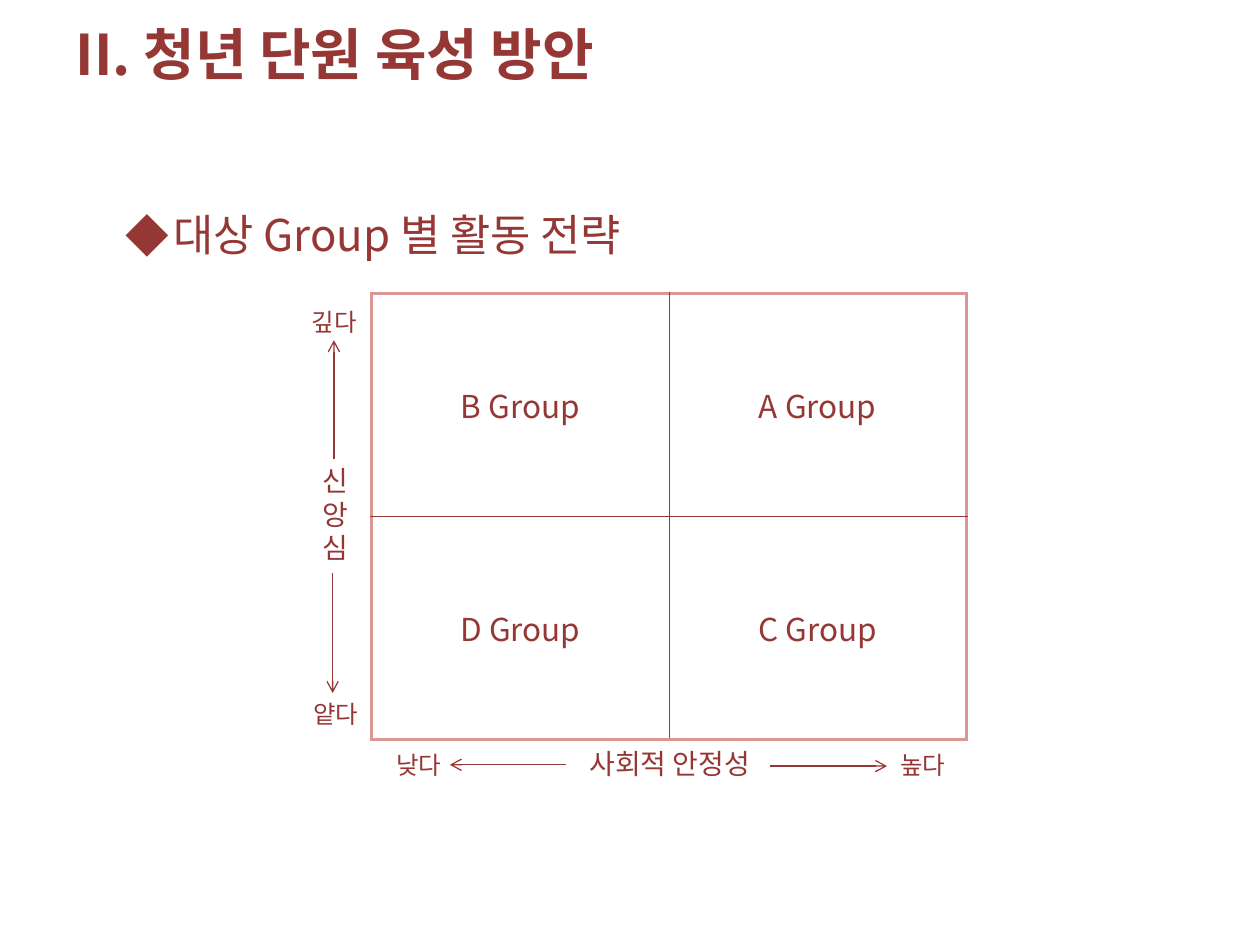
"""Build the slide on activity strategies for four target groups."""
from dataclasses import dataclass

from lxml import etree
from pptx import Presentation
from pptx.dml.color import RGBColor
from pptx.enum import shapes, text
from pptx.oxml import ns
from pptx.util import Inches, Pt


@dataclass(frozen=True)
class Theme:
    font: str = "Noto Sans CJK KR"
    ink: str = "953735"
    frame: str = "D99694"
    title: int = 32
    heading: int = 25
    group: int = 18
    axis: int = 16
    end: int = 14
    frame_width: float = 2.25
    rule_width: float = 0.25
    arrow_width: float = 0.75


@dataclass(frozen=True)
class Label:
    lines: tuple[str, ...]
    left: float
    top: float
    width: float
    height: float
    size: int


@dataclass(frozen=True)
class Arrow:
    x1: float
    y1: float
    x2: float
    y2: float


THEME = Theme()
GROUPS = (("B Group", "A Group"), ("D Group", "C Group"))
LABELS = (
    Label(("신", "앙", "심"), 2.46, 3.63, 0.39, 0.94, THEME.axis),
    Label(("사회적 안정성",), 4.49, 5.88, 1.65, 0.37, THEME.axis),
    Label(("깊다",), 2.29, 2.39, 0.73, 0.34, THEME.end),
    Label(("얕다",), 2.3, 5.5, 0.73, 0.34, THEME.end),
    Label(("낮다",), 2.96, 5.9, 0.73, 0.34, THEME.end),
    Label(("높다",), 6.96, 5.9, 0.73, 0.34, THEME.end),
)
ARROWS = (
    Arrow(2.65, 3.64, 2.65, 2.7),
    Arrow(2.64, 4.55, 2.64, 5.5),
    Arrow(4.49, 6.07, 3.57, 6.07),
    Arrow(6.11, 6.08, 7.04, 6.08),
)


def add_node(parent, tag: str, **attributes: str):
    """Append a DrawingML element and return it."""
    return etree.SubElement(parent, ns.qn(tag), attributes)


def add_run(paragraph, words: str, size: int, bold: bool = False) -> None:
    """Add one run in the theme's font and ink."""
    run = paragraph.add_run()
    run.text = words
    run.font.name = THEME.font
    run.font.size = Pt(size)
    run.font.bold = bold
    run.font.color.rgb = RGBColor.from_string(THEME.ink)
    add_node(run.font._element, "a:ea", typeface=THEME.font)


def add_title(slide, words: str) -> None:
    """Place and fill the title placeholder."""
    title = slide.shapes.title
    title.left, title.top = Inches(0.5), Inches(0.11)
    title.width, title.height = Inches(9), Inches(0.63)
    frame = title.text_frame
    frame.auto_size = text.MSO_AUTO_SIZE.NONE
    frame.vertical_anchor = text.MSO_ANCHOR.MIDDLE
    frame.paragraphs[0].alignment = text.PP_ALIGN.LEFT
    add_run(frame.paragraphs[0], words, THEME.title, bold=True)


def add_heading(slide, words: str) -> None:
    """Add the heading with its diamond bullet."""
    heading = slide.shapes.add_textbox(Inches(0.9), Inches(1.39), Inches(8.58), Inches(4.88))
    heading.text_frame.word_wrap = True
    paragraph = heading.text_frame.paragraphs[0]
    paragraph.line_spacing = 1.5
    paragraph.space_before = Pt(THEME.heading * 0.2)
    properties = paragraph._p.get_or_add_pPr()
    indent = Inches(0.38)
    properties.set("marL", str(indent))
    properties.set("indent", str(-indent))
    add_node(add_node(properties, "a:buClr"), "a:srgbClr", val=THEME.ink)
    add_node(properties, "a:buFont", typeface=THEME.font)
    add_node(properties, "a:buChar", char="◆")
    add_run(paragraph, words, THEME.heading)


def add_border(cell, side: str, outer: bool) -> None:
    """Draw one side of a cell as frame or inner rule."""
    color, width = (
        (THEME.frame, THEME.frame_width) if outer else (THEME.ink, THEME.rule_width)
    )
    border = add_node(cell._tc.get_or_add_tcPr(), f"a:ln{side}", w=str(Pt(width)))
    add_node(add_node(border, "a:solidFill"), "a:srgbClr", val=color)


def add_matrix(slide) -> None:
    """Add the two-by-two table of groups."""
    matrix = slide.shapes.add_table(
        2, 2, Inches(2.95), Inches(2.33), Inches(4.72), Inches(3.54)
    ).table
    matrix.first_row = matrix.horz_banding = False
    for row, names in enumerate(GROUPS):
        for column, name in enumerate(names):
            cell = matrix.cell(row, column)
            cell.vertical_anchor = text.MSO_ANCHOR.MIDDLE
            outer_sides = {"L": column == 0, "R": column == 1, "T": row == 0, "B": row == 1}
            for side, outer in outer_sides.items():
                add_border(cell, side, outer)
            cell.fill.background()
            paragraph = cell.text_frame.paragraphs[0]
            paragraph.alignment = text.PP_ALIGN.CENTER
            add_run(paragraph, name, THEME.group)


def add_label(slide, label: Label) -> None:
    """Add a centred axis label, one paragraph per line."""
    box = slide.shapes.add_textbox(
        Inches(label.left), Inches(label.top), Inches(label.width), Inches(label.height)
    )
    frame = box.text_frame
    frame.word_wrap = False
    frame.auto_size = text.MSO_AUTO_SIZE.SHAPE_TO_FIT_TEXT
    for index, line in enumerate(label.lines):
        paragraph = frame.add_paragraph() if index else frame.paragraphs[0]
        paragraph.alignment = text.PP_ALIGN.CENTER
        add_run(paragraph, line, label.size)


def add_arrow(slide, arrow: Arrow) -> None:
    """Add a thin line with an open arrowhead at its end."""
    connector = slide.shapes.add_connector(
        shapes.MSO_CONNECTOR.STRAIGHT,
        Inches(arrow.x1), Inches(arrow.y1), Inches(arrow.x2), Inches(arrow.y2),
    )
    connector.line.color.rgb = RGBColor.from_string(THEME.ink)
    connector.line.width = Pt(THEME.arrow_width)
    add_node(connector.line._get_or_add_ln(), "a:tailEnd", type="arrow")
    add_node(connector._element.spPr, "a:effectLst")


def main() -> None:
    """Build and save the presentation."""
    deck = Presentation()
    deck.slide_width, deck.slide_height = Inches(10), Inches(7.5)
    slide = deck.slides.add_slide(deck.slide_layouts[5])
    add_title(slide, "II. 청년 단원 육성 방안")
    add_heading(slide, "대상 Group 별 활동 전략")
    add_matrix(slide)
    for label in LABELS:
        add_label(slide, label)
    for arrow in ARROWS:
        add_arrow(slide, arrow)
    deck.save("out.pptx")


if __name__ == "__main__":
    main()
